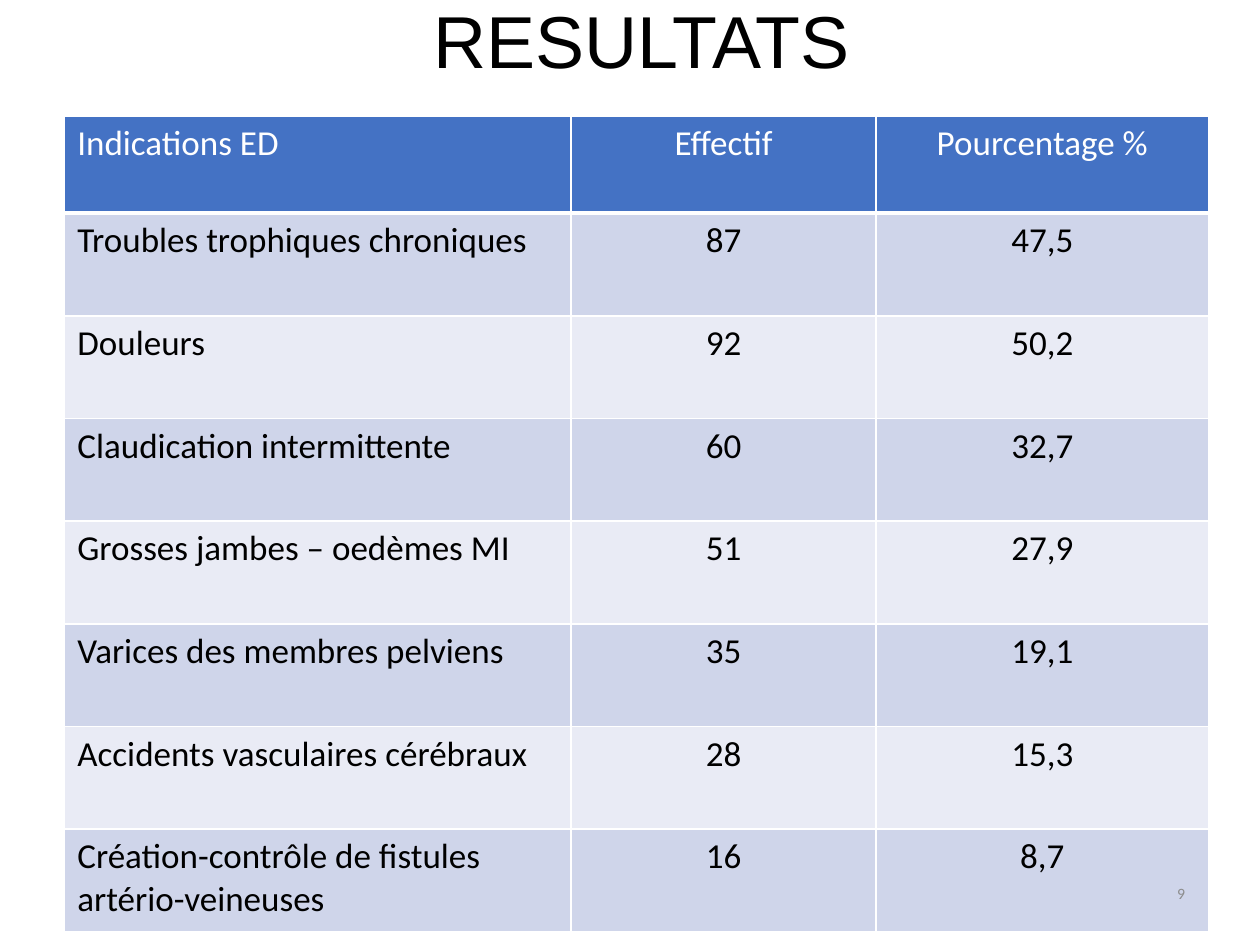
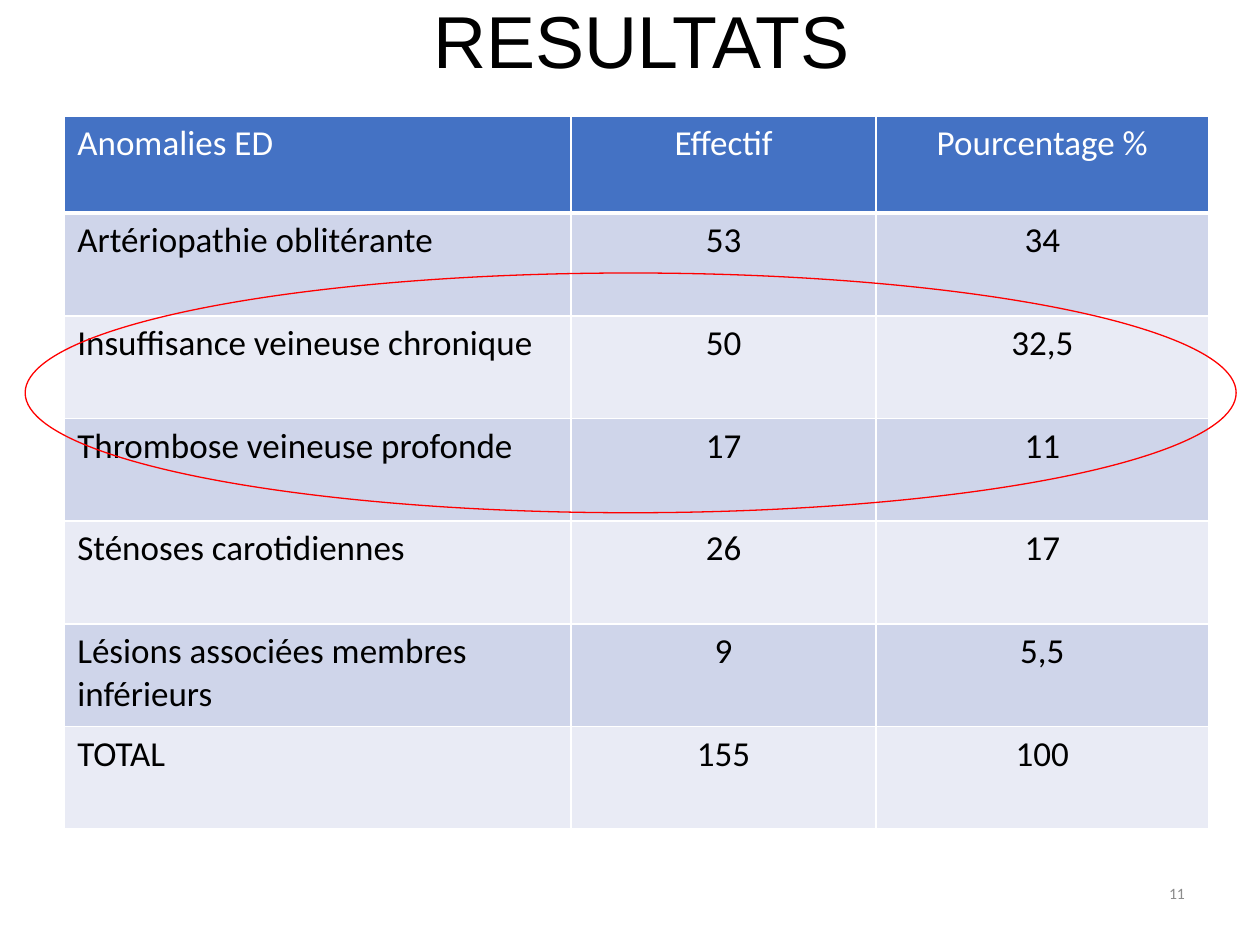
"""Build two result slides, each with a title, a table and a page number."""
from dataclasses import dataclass

from lxml.etree import SubElement
from pptx import Presentation
from pptx.dml.color import RGBColor as Rgb
from pptx.enum.shapes import MSO_SHAPE as Shape
from pptx.enum.text import MSO_ANCHOR as Anchor, PP_ALIGN as Align
from pptx.oxml.ns import qn
from pptx.util import Pt


@dataclass(frozen=True)
class Theme:
    title_font: str = "Arial"
    body_font: str = "Calibri"
    title_size: float = 42
    table_size: float = 20
    number_size: float = 9
    black: str = "000000"
    white: str = "FFFFFF"
    grey: str = "8C8C8C"
    header: str = "4472C4"
    bands: tuple = ("CFD5EA", "E9EBF5")
    highlight: str = "FF0000"


theme = Theme()


def write(frame, text, font, size, color, align):
    para = frame.paragraphs[0]
    para.alignment = align
    span = para.add_run()
    span.text = text
    span.font.name = font
    span.font.size = Pt(size)
    span.font.bold = False
    span.font.color.rgb = Rgb.from_string(color)
    return para


def add_label(page, place, *style):
    box = page.shapes.add_textbox(*map(Pt, place))
    box.text_frame.word_wrap = True
    box.text_frame.vertical_anchor = Anchor.MIDDLE
    return write(box.text_frame, *style)


INDICATIONS = [
    ("Indications ED", "Effectif", "Pourcentage %"),
    ("Troubles trophiques chroniques", "87", "47,5"),
    ("Douleurs", "92", "50,2"),
    ("Claudication intermittente", "60", "32,7"),
    ("Grosses jambes – oedèmes MI", "51", "27,9"),
    ("Varices des membres pelviens", "35", "19,1"),
    ("Accidents vasculaires cérébraux", "28", "15,3"),
    ("Création-contrôle de fistules artério-veineuses", "16", "8,7"),
]
ANOMALIES = [
    ("Anomalies ED", "Effectif", "Pourcentage %"),
    ("Artériopathie oblitérante", "53", "34"),
    ("Insuffisance veineuse chronique", "50", "32,5"),
    ("Thrombose veineuse profonde", "17", "11"),
    ("Sténoses carotidiennes", "26", "17"),
    ("Lésions associées membres inférieurs", "9", "5,5"),
    ("TOTAL", "155", "100"),
]
COLUMN_WIDTHS = (289.4, 174.2, 190.1)
HEADER_HEIGHT, ROW_HEIGHT = 55.6, 58.7

deck = Presentation()
deck.slide_width, deck.slide_height = Pt(720), Pt(540)

for number, rows in (("9", INDICATIONS), ("11", ANOMALIES)):
    page = deck.slides.add_slide(deck.slide_layouts[6])

    height = HEADER_HEIGHT + ROW_HEIGHT * (len(rows) - 1)
    table = page.shapes.add_table(
        len(rows), len(COLUMN_WIDTHS),
        Pt(37), Pt(66.2), Pt(sum(COLUMN_WIDTHS)), Pt(height),
    ).table
    table.horz_banding = False
    for column, width in zip(table.columns, COLUMN_WIDTHS):
        column.width = Pt(width)

    for r, values in enumerate(rows):
        table.rows[r].height = Pt(ROW_HEIGHT if r else HEADER_HEIGHT)
        fill = theme.bands[(r - 1) % 2] if r else theme.header
        color = theme.black if r else theme.white
        for c, value in enumerate(values):
            cell = table.cell(r, c)
            properties = cell._tc.get_or_add_tcPr()
            for side in ("lnL", "lnR", "lnT", "lnB"):
                weight = 3 if r == 0 and side == "lnB" else 1
                border = SubElement(properties, qn(f"a:{side}"), w=str(Pt(weight)))
                solid = SubElement(border, qn("a:solidFill"))
                SubElement(solid, qn("a:srgbClr"), val=theme.white)
            cell.fill.solid()
            cell.fill.fore_color.rgb = Rgb.from_string(fill)
            write(cell.text_frame, value, theme.body_font, theme.table_size,
                  color, Align.CENTER if c else Align.LEFT)

    title = add_label(page, (42.5, -19.4, 648, 90), "RESULTATS", theme.title_font,
                      theme.title_size, theme.black, Align.CENTER)
    title.line_spacing = 0.9
    add_label(page, (516.2, 491.8, 168, 37.4), number, theme.body_font,
              theme.number_size, theme.grey, Align.RIGHT)

venous_ring = page.shapes.add_shape(Shape.OVAL, Pt(14.4), Pt(156), Pt(692), Pt(137))
venous_ring.shadow.inherit = False
venous_ring.fill.background()
venous_ring.line.color.rgb = Rgb.from_string(theme.highlight)
venous_ring.line.width = Pt(0.75)

deck.save("out.pptx")
